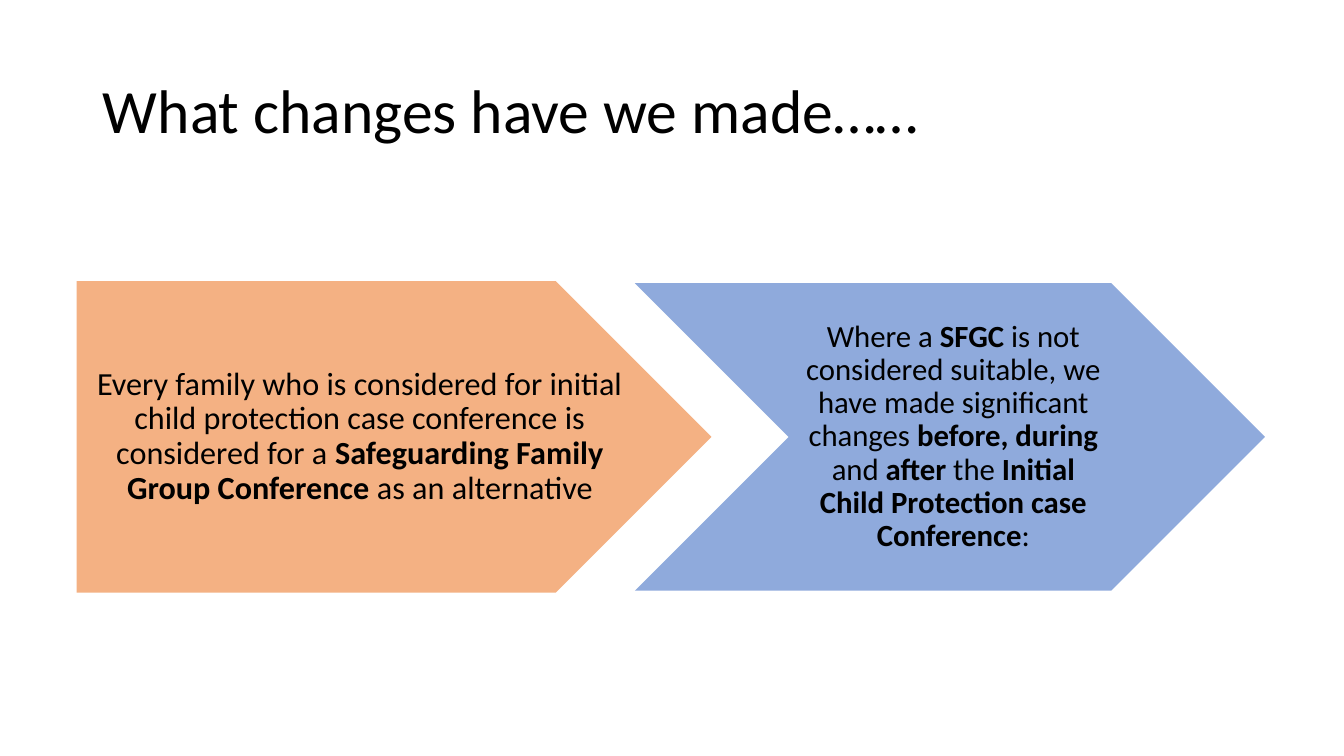
from pptx import Presentation
from pptx import util as u
from pptx.dml.color import RGBColor
from pptx.enum import shapes, text

FONT = "Calibri"
BLACK = RGBColor(0x00, 0x00, 0x00)
ORANGE = RGBColor(0xF4, 0xB1, 0x83)
BLUE = RGBColor(0x8F, 0xAA, 0xDC)

# Each run is (wording, bold)
TITLE = [("What changes have we made……", False)]
FAMILY = [
    ("Every family who is considered for initial child protection "
     "case conference is considered for a ", False),
    ("Safeguarding Family Group Conference ", True),
    ("as an alternative", False),
]
UNSUITABLE = [
    ("Where a ", False),
    ("SFGC", True),
    (" is not considered suitable, we have made significant changes ", False),
    ("before, during ", True),
    ("and ", False),
    ("after", True),
    (" the ", False),
    ("Initial Child Protection case Conference", True),
    (":", False),
]

# Preset, left, width, height, fill, runs, size, margins (left, top/bottom); cm
ARROWS = [
    (shapes.MSO_SHAPE.PENTAGON, 1.93, 16, 7.85, ORANGE, FAMILY, 23, (0.33, 0.18)),
    (shapes.MSO_SHAPE.CHEVRON, 16, 15.88, 7.75, BLUE, UNSUITABLE, 22, (0.25, 0.15)),
]
ARROW_MIDDLE = 11.01
MARGIN_RIGHT = 0.08


def write(tf, runs, size, align=text.PP_ALIGN.LEFT):
    tf.word_wrap = True
    tf.vertical_anchor = text.MSO_ANCHOR.MIDDLE
    p = tf.paragraphs[0]
    p.alignment = align
    p.line_spacing = 0.9
    for wording, bold in runs:
        r = p.add_run()
        r.text = wording
        r.font.name = FONT
        r.font.size = u.Pt(size)
        r.font.bold = bold
        r.font.color.rgb = BLACK


def add_arrow(s, preset, left, width, height, fill, runs, size, margins):
    top = ARROW_MIDDLE - height / 2
    sp = s.shapes.add_shape(preset, u.Cm(left), u.Cm(top), u.Cm(width), u.Cm(height))
    sp.shadow.inherit = False
    sp.fill.solid()
    sp.fill.fore_color.rgb = fill
    sp.line.fill.background()
    tf = sp.text_frame
    tf.margin_left = u.Cm(margins[0])
    tf.margin_top = tf.margin_bottom = u.Cm(margins[1])
    tf.margin_right = u.Cm(MARGIN_RIGHT)
    write(tf, runs, size, align=text.PP_ALIGN.CENTER)


def main():
    prs = Presentation()
    prs.slide_width, prs.slide_height = u.Cm(33.87), u.Cm(19.05)
    s = prs.slides.add_slide(prs.slide_layouts[5])

    title = s.shapes.title
    title.left, title.top = u.Cm(2.34), u.Cm(1.02)
    title.width, title.height = u.Cm(29.21), u.Cm(3.68)
    write(title.text_frame, TITLE, 44)

    for arrow in ARROWS:
        add_arrow(s, *arrow)
    prs.save("out.pptx")


if __name__ == "__main__":
    main()
